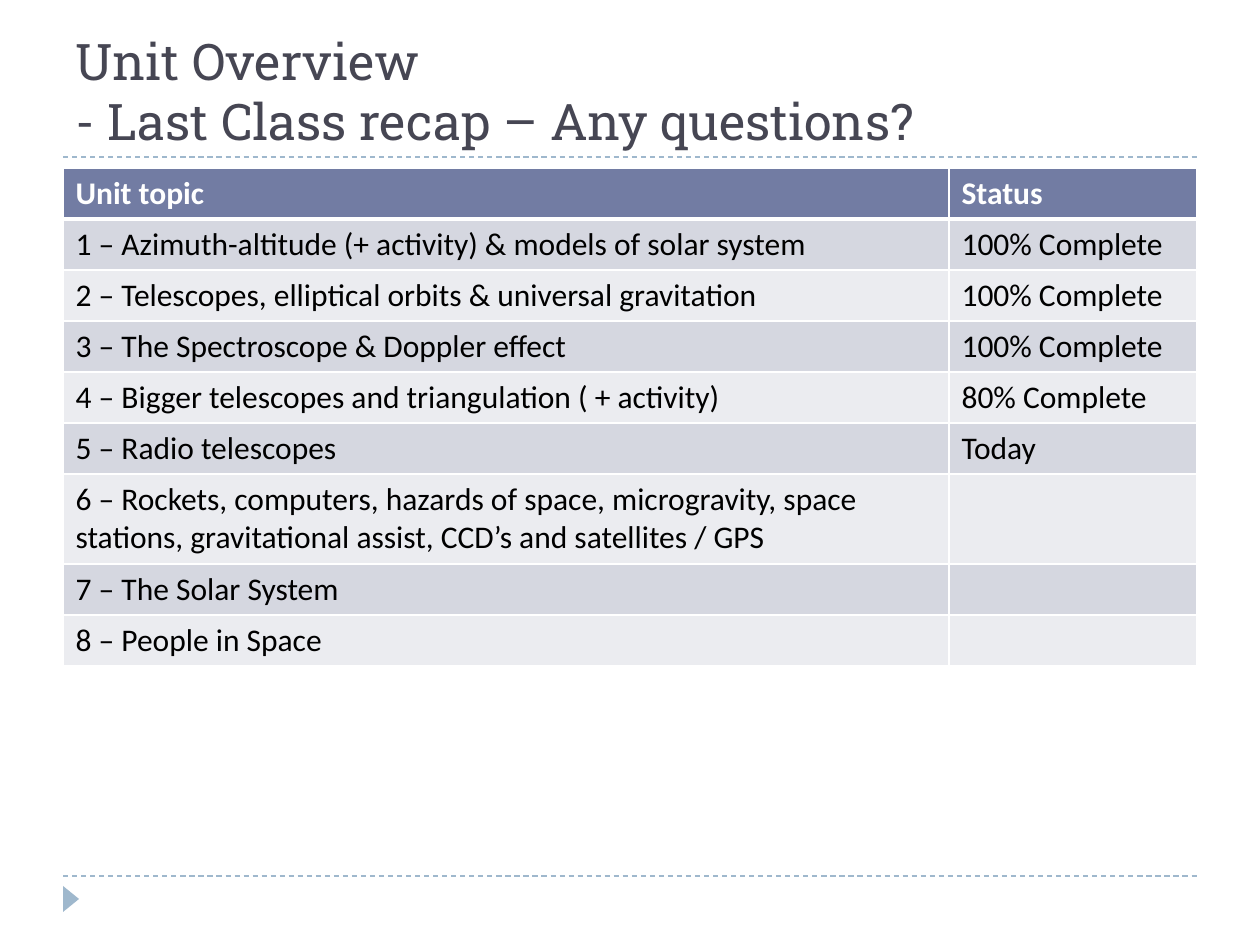
from typing import NamedTuple

from lxml.etree import SubElement
from pptx import Presentation
from pptx.dml.color import RGBColor
from pptx.enum.dml import MSO_LINE_DASH_STYLE as Dash
from pptx.enum.shapes import MSO_CONNECTOR_TYPE as Connector, MSO_SHAPE as Preset
from pptx.enum.text import MSO_VERTICAL_ANCHOR as Anchor
from pptx.oxml import parse_xml
from pptx.oxml.ns import nsdecls, qn
from pptx.util import Pt

EMU_PER_PX = 914400 / 126
COLORS = {
    "title": "464653", "accent": "9FB8CD", "header": "727CA3",
    "odd": "D5D7E0", "even": "EBECF0", "white": "FFFFFF", "black": "000000",
}
LEFT, WIDTH = 63, 1134
TABLE_TOP = 168
COLUMN_WIDTHS = (886, 248)
LINE_HEIGHT, ROW_PADDING = 39, 12
TITLE_FORMAT = {"name": "Roboto Slab", "size": Pt(28.8), "bold": False}
HEADER_FORMAT = {"name": "Calibri", "size": Pt(18), "bold": True}
BODY_FORMAT = {**HEADER_FORMAT, "bold": False}


class Topic(NamedTuple):
    name: str
    status: str = ""
    lines: int = 1


HEADER = Topic("Unit topic", "Status")
TOPICS = [
    Topic("1 – Azimuth-altitude (+ activity) & models of solar system", "100% Complete"),
    Topic("2 – Telescopes, elliptical orbits & universal gravitation", "100% Complete"),
    Topic("3 – The Spectroscope & Doppler effect", "100% Complete"),
    Topic("4 – Bigger telescopes and triangulation ( + activity)", "80% Complete"),
    Topic("5 – Radio telescopes", "Today"),
    Topic("6 – Rockets, computers, hazards of space, microgravity, space stations, "
          "gravitational assist, CCD’s and satellites / GPS", lines=2),
    Topic("7 – The Solar System"),
    Topic("8 – People in Space"),
]


def px(length: int) -> int:
    return round(length * EMU_PER_PX)


def rgb(name: str) -> RGBColor:
    return RGBColor.from_string(COLORS[name])


def format_font(font, values: dict, color: str) -> None:
    for attribute, value in values.items():
        setattr(font, attribute, value)
    font.color.rgb = rgb(color)


def draw_rule(slide, y: int) -> None:
    rule = slide.shapes.add_connector(
        Connector.STRAIGHT, px(LEFT), px(y), px(LEFT + WIDTH), px(y))
    rule.line.color.rgb = rgb("accent")
    rule.line.width = Pt(0.75)
    rule.line.dash_style = Dash.DASH
    SubElement(rule._element.spPr, qn("a:effectLst"))


def draw_marker(slide) -> None:
    marker = slide.shapes.add_shape(
        Preset.ISOSCELES_TRIANGLE, px(58), px(891), px(26), px(16))
    marker.rotation = 90
    marker.shadow.inherit = False
    marker.fill.solid()
    marker.fill.fore_color.rgb = rgb("accent")
    marker.line.fill.background()


def draw_title(slide, lines: list[str]) -> None:
    frame = slide.shapes.add_textbox(px(LEFT), px(21), px(WIDTH), px(136)).text_frame
    frame.word_wrap = True
    frame.vertical_anchor = Anchor.BOTTOM
    paragraph = frame.paragraphs[0]
    paragraph.text = "\v".join(lines)
    format_font(paragraph.font, TITLE_FORMAT, "title")
    for run in paragraph.runs:
        format_font(run.font, TITLE_FORMAT, "title")


def set_borders(cell, bottom: int) -> None:
    """Draw white cell borders, with the bottom one of the given points."""
    widths = {"lnL": 1, "lnR": 1, "lnT": 1, "lnB": bottom}
    for index, (tag, width) in enumerate(widths.items()):
        border = parse_xml(
            f'<a:{tag} {nsdecls("a")} w="{Pt(width)}"><a:solidFill>'
            f'<a:srgbClr val="{COLORS["white"]}"/></a:solidFill></a:{tag}>')
        cell._tc.get_or_add_tcPr().insert(index, border)


def fill_cell(cell, text: str, fill: str, is_header: bool) -> None:
    cell.fill.solid()
    cell.fill.fore_color.rgb = rgb(fill)
    set_borders(cell, 3 if is_header else 1)
    paragraph = cell.text_frame.paragraphs[0]
    values, color = (HEADER_FORMAT, "white") if is_header else (BODY_FORMAT, "black")
    if text:
        format_font(paragraph.add_run().font, values, color)
        paragraph.runs[0].text = text
    else:
        format_font(paragraph.font, values, color)


def draw_topics(slide, topics: list[Topic]) -> None:
    rows = [HEADER, *topics]
    heights = [topic.lines * LINE_HEIGHT + ROW_PADDING for topic in rows]
    table = slide.shapes.add_table(
        len(rows), len(COLUMN_WIDTHS), px(LEFT), px(TABLE_TOP),
        px(WIDTH), px(sum(heights))).table
    for column, width in zip(table.columns, COLUMN_WIDTHS):
        column.width = px(width)
    for index, (topic, height) in enumerate(zip(rows, heights)):
        table.rows[index].height = px(height)
        fill = "header" if index == 0 else ("even", "odd")[index % 2]
        for column, text in enumerate((topic.name, topic.status)):
            fill_cell(table.cell(index, column), text, fill, index == 0)


def main() -> None:
    presentation = Presentation()
    presentation.slide_width, presentation.slide_height = px(1260), px(945)
    slide = presentation.slides.add_slide(presentation.slide_layouts[6])
    for y in (876, 157):
        draw_rule(slide, y)
    draw_marker(slide)
    draw_title(slide, ["Unit Overview", "- Last Class recap – Any questions?"])
    draw_topics(slide, TOPICS)
    presentation.save("out.pptx")


if __name__ == "__main__":
    main()
